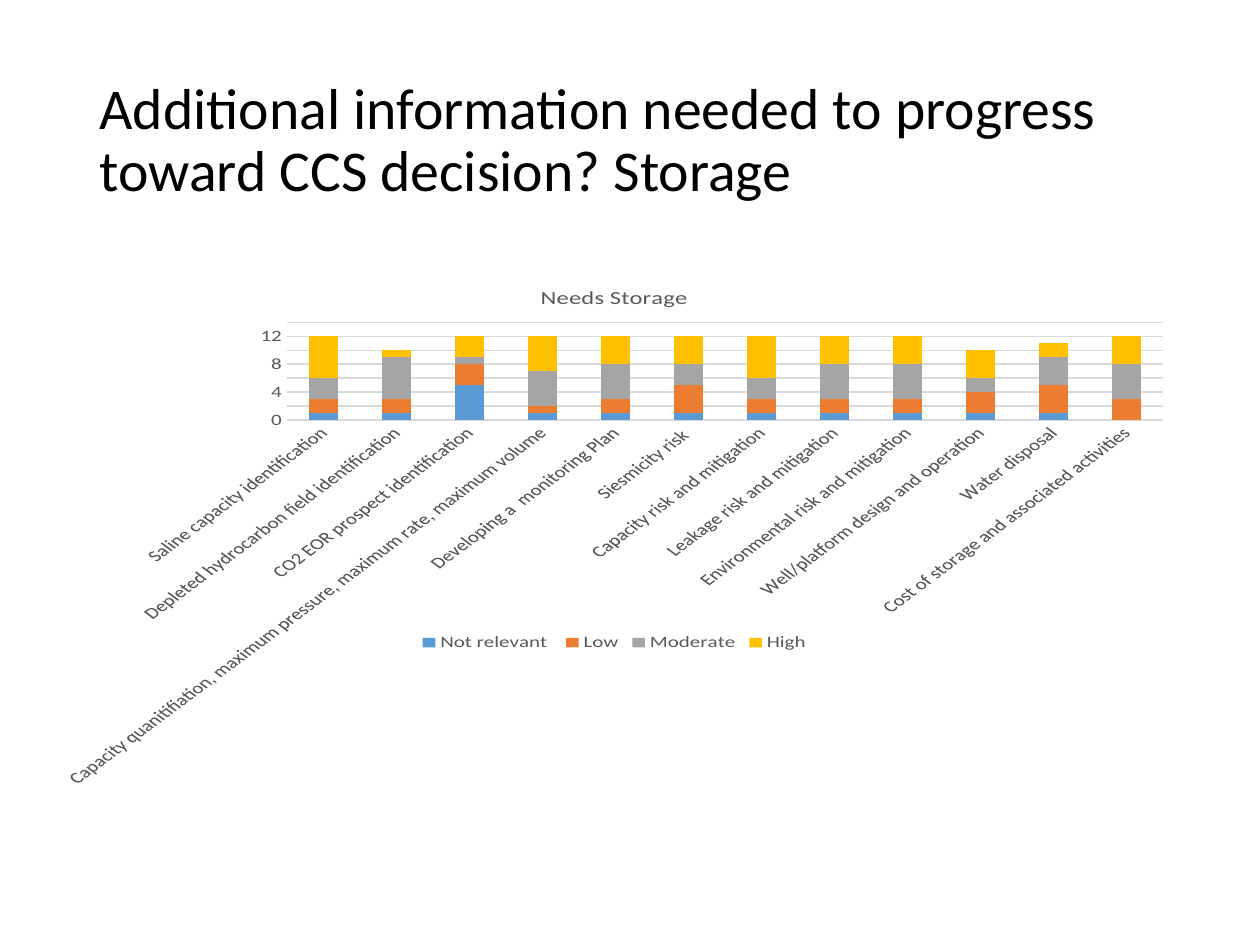
from pptx import Presentation
from pptx.chart.data import CategoryChartData as ChartData
from pptx.dml.color import RGBColor as RGB
from pptx.enum.chart import XL_CHART_TYPE as Kind, XL_LEGEND_POSITION as Spot, XL_TICK_MARK as Tick
from pptx.enum.text import MSO_ANCHOR as Anchor, PP_ALIGN as Align
from pptx.util import Inches, Pt

HUES = {
    "ink": "000000", "text": "595959", "rule": "D9D9D9",
    "blue": "5B9BD5", "orange": "ED7D31", "gray": "A5A5A5", "gold": "FFC000",
}
NEEDS = [
    "Saline capacity identification",
    "Depleted hydrocarbon field identification",
    "CO2 EOR prospect identification",
    "Capacity quanitifiation, maximum pressure, maximum rate, maximum volume",
    "Developing a  monitoring Plan",
    "Siesmicity risk ",
    "Capacity risk and mitigation",
    "Leakage risk and mitigation",
    "Environmental risk and mitigation",
    "Well/platform design and operation",
    "Water disposal",
    "Cost of storage and associated activities",
]
VOTES = [
    ("Not relevant ", "blue", [1, 1, 5, 1, 1, 1, 1, 1, 1, 1, 1, 0]),
    ("Low", "orange", [2, 2, 3, 1, 2, 4, 2, 2, 2, 3, 4, 3]),
    ("Moderate", "gray", [3, 6, 1, 5, 5, 3, 3, 5, 5, 2, 4, 5]),
    ("High", "gold", [6, 1, 3, 5, 4, 4, 6, 4, 4, 4, 2, 4]),
]


class Deck:
    face = "Calibri"

    def __init__(self, wide, high):
        self.prs = Presentation()
        self.prs.slide_width, self.prs.slide_height = Inches(wide), Inches(high)
        self.slide = self.prs.slides.add_slide(self.prs.slide_layouts[5])

    def apply(self, item, style):
        for name, value in style.items():
            setattr(item, name, value)

    def hue(self, name):
        return RGB.from_string(HUES[name])

    def style(self, font, size, hue):
        self.apply(font, {"name": self.face, "size": Pt(size), "bold": False})
        font.color.rgb = self.hue(hue)

    def rule(self, line):
        line.width = Pt(0.75)
        line.color.rgb = self.hue("rule")

    def title(self, text, x, y, w, h):
        box = self.slide.shapes.title
        self.apply(box, {"left": Inches(x), "top": Inches(y),
                         "width": Inches(w), "height": Inches(h)})
        frame = box.text_frame
        frame.text = text
        self.apply(frame, {"word_wrap": True, "vertical_anchor": Anchor.MIDDLE})
        para = frame.paragraphs[0]
        self.apply(para, {"alignment": Align.LEFT, "line_spacing": 0.9})
        self.style(para.runs[0].font, 33, "ink")

    def stack(self, head, cats, rows, x, y, w, h):
        data = ChartData()
        data.categories = cats
        for name, _, vals in rows:
            data.add_series(name, vals)
        chart = self.slide.shapes.add_chart(
            Kind.COLUMN_STACKED, Inches(x), Inches(y), Inches(w), Inches(h), data).chart
        self.style(chart.font, 12, "ink")

        # Chart title and legend
        chart.has_title = True
        chart.chart_title.include_in_layout = False
        frame = chart.chart_title.text_frame
        frame.text = head
        self.style(frame.paragraphs[0].runs[0].font, 14, "text")
        chart.has_legend = True
        self.apply(chart.legend, {"position": Spot.BOTTOM, "include_in_layout": False})
        self.style(chart.legend.font, 12, "text")

        # Axes
        for axis in (chart.category_axis, chart.value_axis):
            self.apply(axis, {"major_tick_mark": Tick.NONE, "minor_tick_mark": Tick.NONE})
            self.style(axis.tick_labels.font, 12, "text")
        self.rule(chart.category_axis.format.line)
        chart.value_axis.format.line.fill.background()
        self.rule(chart.value_axis.major_gridlines.format.line)

        # Bars
        plot = chart.plots[0]
        self.apply(plot, {"gap_width": 150, "overlap": 100, "vary_by_categories": False})
        for bar, (_, hue, _) in zip(plot.series, rows):
            bar.format.fill.solid()
            bar.format.fill.fore_color.rgb = self.hue(hue)


def main():
    deck = Deck(10, 7.5)
    deck.title("Additional information needed to progress toward CCS decision? Storage",
               0.69, 0.4, 8.62, 1.45)
    deck.stack("Needs Storage", NEEDS, VOTES, 0.34, 2.13, 9.07, 4.12)
    deck.prs.save("out.pptx")


if __name__ == "__main__":
    main()
